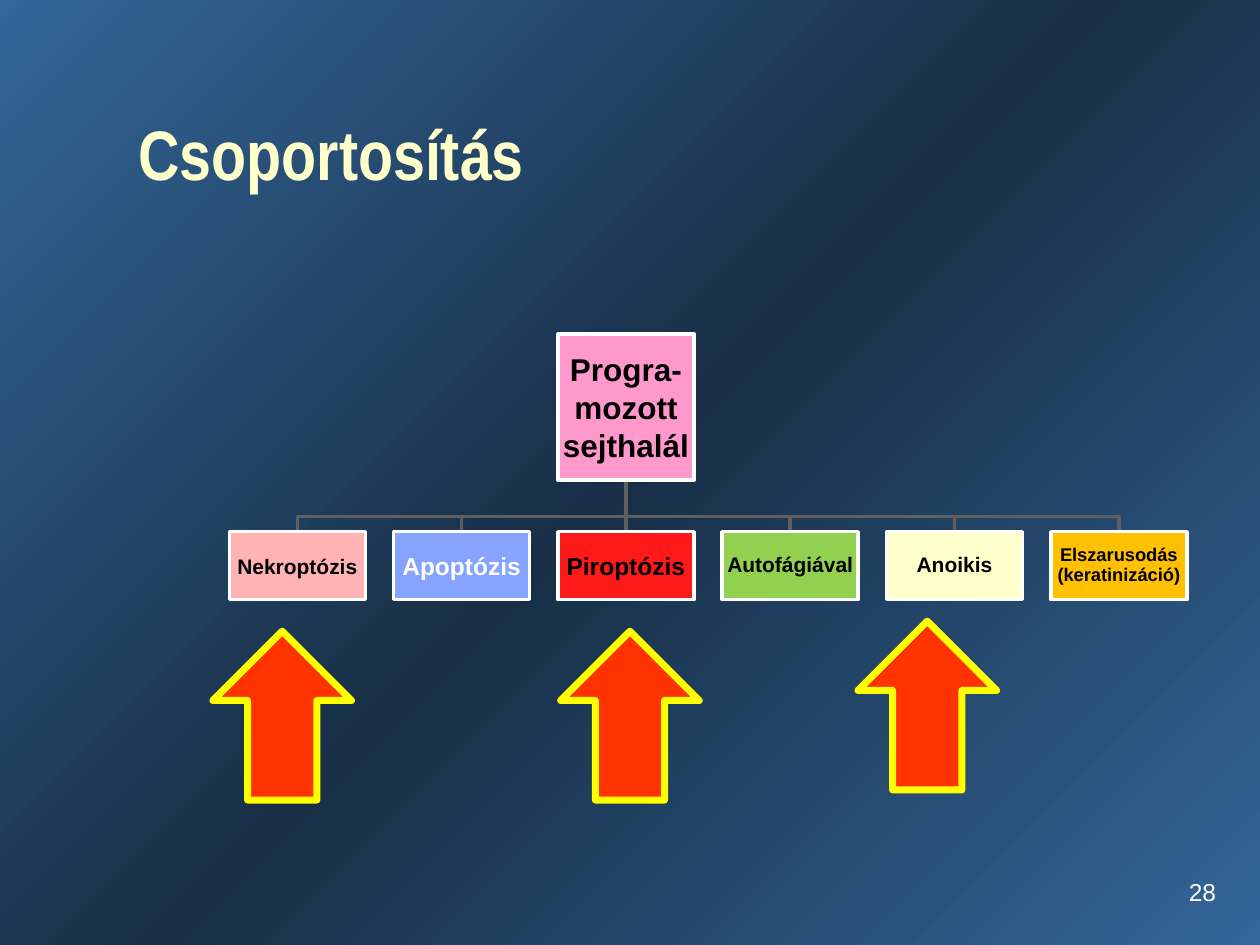
from copy import deepcopy

from lxml import etree
from pptx import Presentation
from pptx.dml.color import RGBColor
from pptx.enum.shapes import MSO_CONNECTOR, MSO_SHAPE
from pptx.enum.text import MSO_ANCHOR, MSO_AUTO_SIZE, PP_ALIGN
from pptx.oxml.ns import qn
from pptx.util import Inches, Pt

RECT, UP_ARROW = MSO_SHAPE.RECTANGLE, MSO_SHAPE.UP_ARROW
STRAIGHT = MSO_CONNECTOR.STRAIGHT
MIDDLE, NO_FIT = MSO_ANCHOR.MIDDLE, MSO_AUTO_SIZE.NONE
LEFT, CENTER, RIGHT = PP_ALIGN.LEFT, PP_ALIGN.CENTER, PP_ALIGN.RIGHT

BLACK = RGBColor(0x00, 0x00, 0x00)
WHITE = RGBColor(0xFF, 0xFF, 0xFF)
BLUE = RGBColor(0x33, 0x66, 0x99)
NAVY = RGBColor(0x18, 0x2F, 0x47)
CREAM = RGBColor(0xFF, 0xFF, 0xCC)
GRAY = RGBColor(0x5F, 0x5F, 0x5F)
PINK = RGBColor(0xFF, 0x99, 0xCC)
ROSE = RGBColor(0xFF, 0xB3, 0xB3)
PERIWINKLE = RGBColor(0x85, 0xA3, 0xFF)
RED = RGBColor(0xFF, 0x1A, 0x1A)
GREEN = RGBColor(0x92, 0xD0, 0x50)
GOLD = RGBColor(0xFF, 0xC0, 0x00)
ORANGE = RGBColor(0xFF, 0x33, 0x00)
YELLOW = RGBColor(0xFF, 0xFF, 0x00)

# Chart grid, in inches
COL_LEFT, COL_STEP, BOX_W = 1.82, 1.304, 1.08
ROOT_COL = 2
ROOT_TOP, ROOT_H = 2.65, 1.16
BUS_Y = 4.1
LEAF_TOP, LEAF_H = 4.22, 0.54

LEAVES = [  # text, fill, font colour, size, line spacing
    ("Nekroptózis", ROSE, BLACK, 12, 1.0),
    ("Apoptózis", PERIWINKLE, WHITE, 14, 1.0),
    ("Piroptózis", RED, BLACK, 14, 1.0),
    ("Autofágiával", GREEN, BLACK, 12, 0.9),
    ("Anoikis", CREAM, BLACK, 12, 0.9),
    ("Elszarusodás (keratinizáció)", GOLD, BLACK, 10.5, 0.9),
]
ARROWS = [(6.81, 4.93), (4.45, 5.01), (1.69, 5.01)]


def style_text(sp, text, font, size, color, align, bold=False, spacing=1.0):
    tf = sp.text_frame
    tf.text = text
    tf.auto_size = NO_FIT
    tf.vertical_anchor = MIDDLE
    p = tf.paragraphs[0]
    p.alignment, p.line_spacing = align, spacing
    p.font.name, p.font.size, p.font.bold = font, Pt(size), bold
    p.font.color.rgb = color
    return tf


def add_box(col, top, height, text, fill, color, size, spacing):
    sp = slide.shapes.add_shape(RECT, Inches(COL_LEFT + col * COL_STEP),
                                Inches(top), Inches(BOX_W), Inches(height))
    sp.shadow.inherit = False
    sp.fill.solid()
    sp.fill.fore_color.rgb = fill
    sp.line.color.rgb, sp.line.width = WHITE, Pt(2)
    tf = style_text(sp, text, "Arial", size, color, CENTER, True, spacing)
    tf.word_wrap = True
    tf.margin_left = tf.margin_right = Inches(0.01)
    tf.margin_top = tf.margin_bottom = Inches(0.01)


prs = Presentation()
prs.slide_width, prs.slide_height = Inches(10), Inches(7.5)
slide = prs.slides.add_slide(prs.slide_layouts[5])

# Background: dark diagonal band between two light corners
bg = slide.background.fill
bg.gradient()
bg.gradient_angle = 315
gs_list = slide.background._cSld.find(".//" + qn("a:gsLst"))
gs_list.insert(1, deepcopy(gs_list[0]))
for stop, position, color in zip(bg.gradient_stops, (0, 0.5, 1), (BLUE, NAVY, BLUE)):
    stop.position = position
    stop.color.rgb = color

# Slide number and title
sp = slide.shapes.add_textbox(Inches(7.67), Inches(6.83), Inches(2.08), Inches(0.5))
style_text(sp, "28", "Arial", 14, WHITE, RIGHT).word_wrap = True

title = slide.shapes.title
title.left, title.top = Inches(1), Inches(0.67)
title.width, title.height = Inches(8.17), Inches(1.25)
style_text(title, "Csoportosítás", "Arial Narrow", 40, CREAM, LEFT, True, 0.7)

# Branches from the root to each leaf
root_x = Inches(COL_LEFT + ROOT_COL * COL_STEP + BOX_W / 2)
root_bottom, bus_y, leaf_top = Inches(ROOT_TOP + ROOT_H), Inches(BUS_Y), Inches(LEAF_TOP)
for col in reversed(range(len(LEAVES))):
    x = Inches(COL_LEFT + col * COL_STEP + BOX_W / 2)
    if col == ROOT_COL:
        branch = slide.shapes.add_connector(STRAIGHT, x, root_bottom, x, leaf_top)
        etree.SubElement(branch._element.spPr, qn("a:effectLst"))
    else:
        fb = slide.shapes.build_freeform(root_x, root_bottom)
        fb.add_line_segments([(root_x, bus_y), (x, bus_y), (x, leaf_top)], close=False)
        branch = fb.convert_to_shape()
        branch.fill.background()
        branch.shadow.inherit = False
    branch.line.color.rgb, branch.line.width = GRAY, Pt(2)

# Boxes
add_box(ROOT_COL, ROOT_TOP, ROOT_H, "Progra-mozott sejthalál", PINK, BLACK, 18, 1.0)
for col, leaf in enumerate(LEAVES):
    add_box(col, LEAF_TOP, LEAF_H, *leaf)

# Arrows pointing at the highlighted leaves
for left, top in ARROWS:
    sp = slide.shapes.add_shape(UP_ARROW, Inches(left), Inches(top), Inches(1.1), Inches(1.34))
    sp.shadow.inherit = False
    sp.fill.solid()
    sp.fill.fore_color.rgb = ORANGE
    sp.line.color.rgb, sp.line.width = YELLOW, Pt(4)

prs.save("out.pptx")
